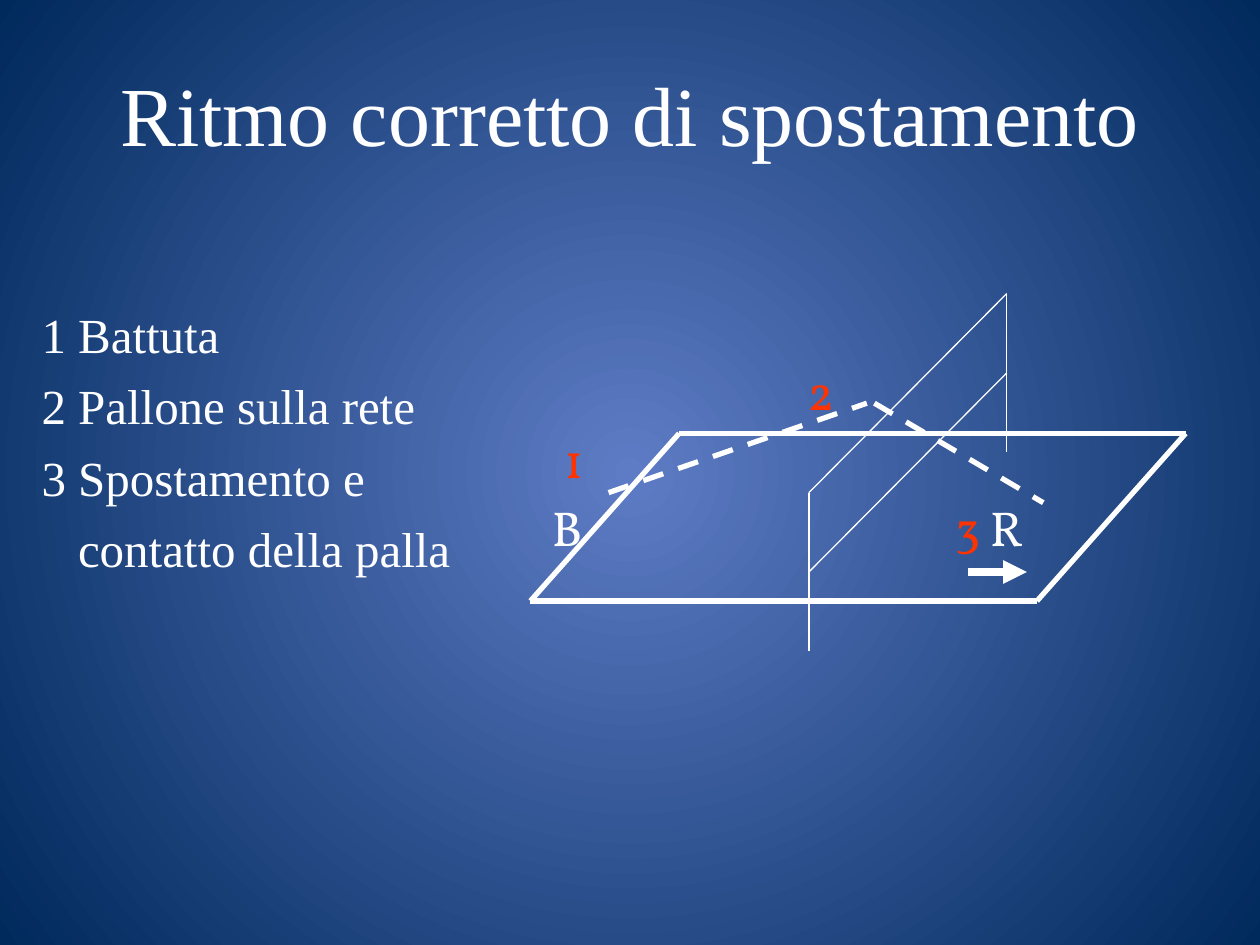
from pptx import Presentation
from pptx.dml.color import RGBColor
from pptx.enum.dml import MSO_LINE
from pptx.enum.shapes import MSO_CONNECTOR
from pptx.enum.text import MSO_ANCHOR, PP_ALIGN
from pptx.oxml.ns import qn
from pptx.util import Inches, Pt
from lxml.etree import SubElement

COLORS = {"text": "FFFFFF", "step": "FF3300", "centre": "5E7CC5", "edge": "00295C"}
SERIF, LABEL = "Times New Roman", "Vollkorn"


class CourtSlide:
    def __init__(self, prs):
        self.slide = prs.slides.add_slide(prs.slide_layouts[6])

    def color(self, name):
        return RGBColor.from_string(COLORS[name])

    def background(self):
        fill = self.slide.background.fill
        fill.gradient()
        for stop, name in zip(fill.gradient_stops, ("centre", "edge")):
            stop.color.rgb = self.color(name)
        gradient = next(self.slide.element.iter(qn("a:gradFill")))
        gradient.remove(gradient.find(qn("a:lin")))
        radial = SubElement(gradient, qn("a:path"), path="circle")
        SubElement(radial, qn("a:fillToRect"), l="50000", t="50000", r="50000", b="50000")

    def frame(self, left, top, width, height):
        frame = self.slide.shapes.add_textbox(*map(Inches, (left, top, width, height))).text_frame
        frame.word_wrap = True
        frame.margin_left = frame.margin_right = frame.margin_top = frame.margin_bottom = 0
        return frame

    def style(self, run, font, size, color="text"):
        run.font.name, run.font.size = font, Pt(size)
        run.font.color.rgb = self.color(color)

    def title(self, text):
        frame = self.frame(0.5, 0.23, 9, 1.33)
        frame.vertical_anchor = MSO_ANCHOR.MIDDLE
        frame.text = text
        heading = frame.paragraphs[0]
        heading.alignment = PP_ALIGN.CENTER
        self.style(heading.runs[0], SERIF, 48)

    def steps(self, lines, left, top):
        frame = self.frame(left, top, 3.7, 2.2)
        frame.text = "\n".join(lines)
        for step in frame.paragraphs:
            step.space_after = Pt(7)
            self.style(step.runs[0], SERIF, 28)
        # The last line continues step 3, aligned with its words
        step._p.get_or_add_pPr().set("marL", str(Inches(0.29)))

    def label(self, left, top, *parts):
        paragraph = self.frame(left, top, 0.8, 0.54).paragraphs[0]
        for text, color in parts:
            run = paragraph.add_run()
            run.text = text
            self.style(run, LABEL, 28, color)

    def line(self, start, end, width=3, dashed=False, arrow=False):
        connector = self.slide.shapes.add_connector(
            MSO_CONNECTOR.STRAIGHT, *map(Inches, (*start, *end)))
        connector.line.color.rgb = self.color("text")
        connector.line.width = Pt(width)
        if dashed:
            connector.line.dash_style = MSO_LINE.DASH
        if arrow:
            SubElement(connector.line._get_or_add_ln(), qn("a:tailEnd"), type="triangle")
        SubElement(connector._element.spPr, qn("a:effectLst"))


def main():
    prs = Presentation()
    prs.slide_width, prs.slide_height = Inches(10), Inches(7.5)
    court = CourtSlide(prs)
    court.background()
    court.title("Ritmo corretto di spostamento")
    court.steps(["1 Battuta", "2 Pallone sulla rete", "3 Spostamento e",
                 "contatto della palla"], 0.33, 2.42)

    # Step numbers and players
    court.label(6.41, 2.87, ("2", "step"))
    court.label(4.48, 3.41, ("1", "step"))
    court.label(4.38, 3.95, ("B", "text"))
    court.label(7.58, 3.95, ("3 ", "step"), ("R", "text"))

    # Court: side lines, then far and near lines
    far, near, length = (5.39, 3.44), (4.21, 4.77), 4.02
    for offset in (0, length):
        court.line((far[0] + offset, far[1]), (near[0] + offset, near[1]))
    for x, y in (far, near):
        court.line((x, y), (x + length, y))

    # Net: two posts and two bands
    near_x, near_top, far_x, far_top = 6.42, 3.91, 7.99, 2.33
    for x, top in ((near_x, near_top), (far_x, far_top)):
        court.line((x, top + 1.26), (x, top), 0.75)
    for drop in (0, 0.63):
        court.line((near_x, near_top + drop), (far_x, far_top + drop), 0.75)

    # Ball flight and receiver's movement
    court.line((4.83, 3.91), (6.88, 3.2), dashed=True)
    court.line((6.94, 3.2), (8.28, 3.99), dashed=True)
    court.line((7.68, 4.54), (8.15, 4.54), 4.5, arrow=True)
    prs.save("out.pptx")


if __name__ == "__main__":
    main()
